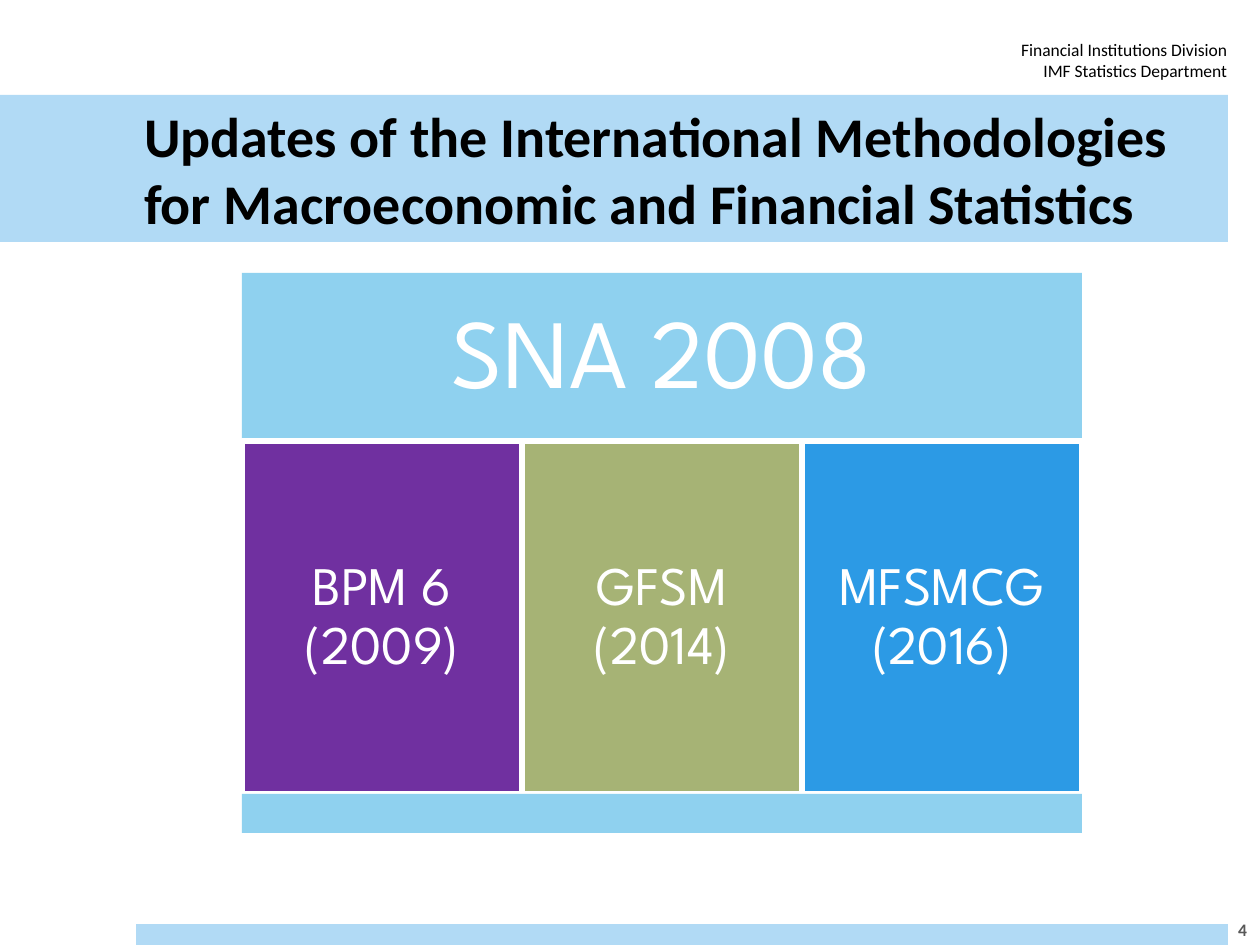
from pptx import Presentation
from pptx.dml.color import RGBColor
from pptx.enum.shapes import MSO_SHAPE
from pptx.enum.text import MSO_ANCHOR, PP_ALIGN
from pptx.util import Emu, Pt

COLORS = {
    "pale": "B1DAF5", "sky": "8FD1EF", "purple": "7030A0", "olive": "A6B375",
    "blue": "2C9AE5", "white": "FFFFFF", "black": "000000", "gray": "595959",
}
EMU_PER_PX = 914400 / 126


def add_box(left, top, width, height, fill=None, line=None):
    area = [Emu(round(n * EMU_PER_PX)) for n in (left, top, width, height)]
    if fill is None:
        return page.shapes.add_textbox(*area)
    box = page.shapes.add_shape(MSO_SHAPE.RECTANGLE, *area)
    box.shadow.inherit = False
    box.fill.solid()
    box.fill.fore_color.rgb = RGBColor.from_string(COLORS[fill])
    if line:
        box.line.color.rgb = RGBColor.from_string(COLORS[line])
        box.line.width = Pt(3)
    else:
        box.line.fill.background()
    return box


def write(box, lines, size, color, font="Calibri", bold=False,
          align=PP_ALIGN.CENTER, insets=(13, 6, 13, 6), spacing=1.0):
    frame = box.text_frame
    frame.word_wrap = True
    frame.vertical_anchor = MSO_ANCHOR.MIDDLE
    (frame.margin_left, frame.margin_top, frame.margin_right,
     frame.margin_bottom) = [Emu(round(n * EMU_PER_PX)) for n in insets]
    para = frame.paragraphs[0]
    para.alignment = align
    para.line_spacing = spacing
    for index, line in enumerate(lines):
        if index:
            para.add_line_break()
        span = para.add_run()
        span.text = line
        span.font.size = Pt(size)
        span.font.name = font
        span.font.bold = bold
        span.font.color.rgb = RGBColor.from_string(COLORS[color])


deck = Presentation()
deck.slide_width = Emu(round(1260 * EMU_PER_PX))
deck.slide_height = Emu(round(945 * EMU_PER_PX))
page = deck.slides.add_slide(deck.slide_layouts[6])

# Footer bar and department name
add_box(136, 924, 1092, 21, "pale")
department = add_box(935, 32, 305, 55)
write(department, ["Financial Institutions Division", "IMF Statistics Department"],
      10, "black", align=PP_ALIGN.RIGHT)

# Title band
title = add_box(0, 95, 1228, 147, "pale")
write(title, ["Updates of the International Methodologies for Macroeconomic "
              "and Financial Statistics"],
      32, "black", bold=True, align=PP_ALIGN.LEFT, insets=(144, 5, 38, 5))

# Page number
number = add_box(1211, 903, 63, 53)
write(number, ["4"], 10, "gray", bold=True)

# Framework heading
left, width = 242, 840
heading = add_box(left, 273, width, 168, "sky")
write(heading, ["SNA 2008"], 56, "white", "League Spartan",
      insets=(29, 29, 29, 29), spacing=0.9)

# One column per manual
manuals = [("BPM 6 (2009)", "purple"), ("GFSM (2014)", "olive"),
           ("MFSMCG (2016)", "blue")]
column_width = width // len(manuals)
for index, (name, fill) in enumerate(manuals):
    column = add_box(left + index * column_width, 441, column_width, 353,
                     fill, "white")
    write(column, [name], 31, "white", "League Spartan",
          insets=(16, 16, 16, 16), spacing=0.9)

# Framework base
add_box(left, 794, width, 39, "sky")

deck.save("out.pptx")
